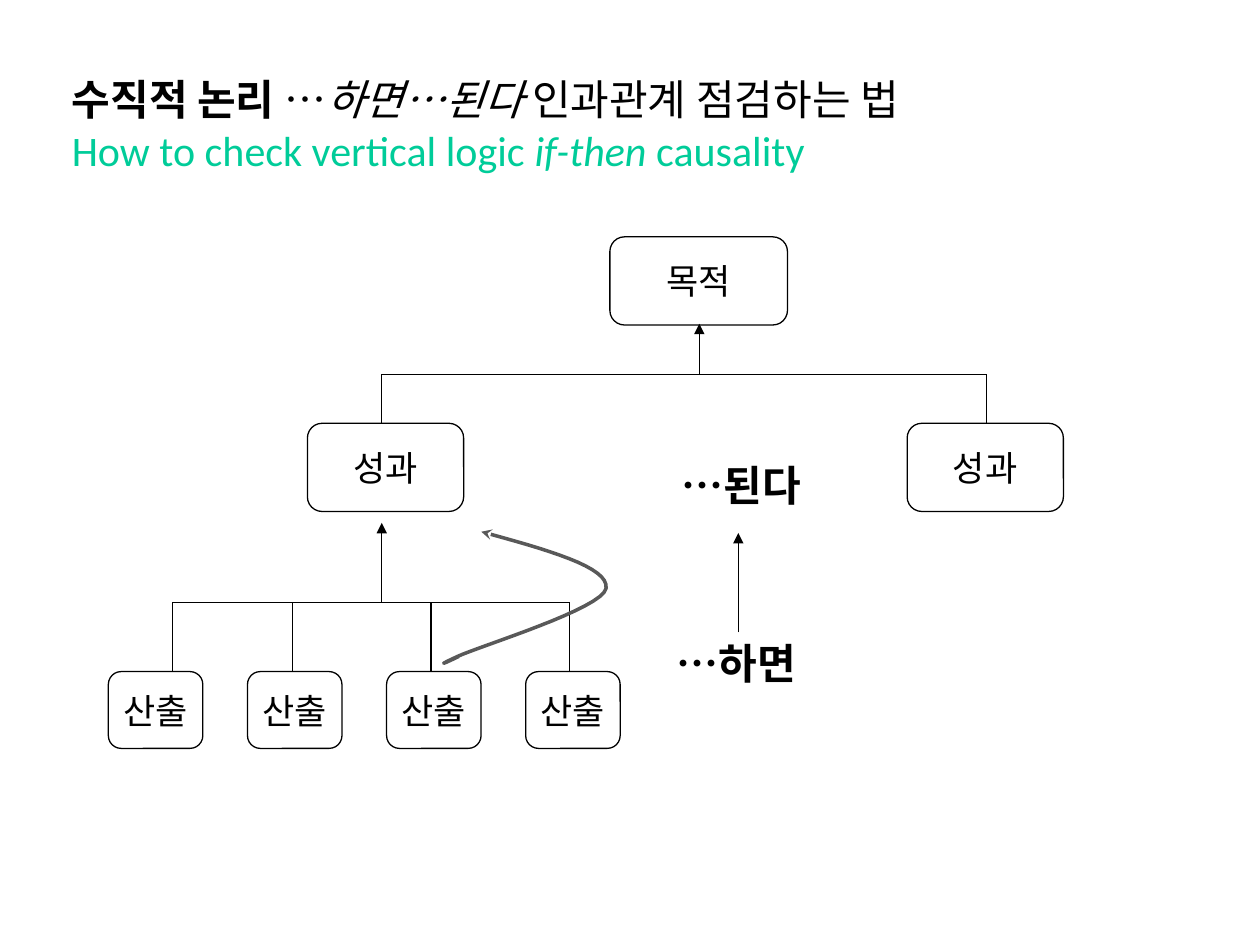
import dataclasses

import lxml.etree
import pptx
import pptx.dml.color
import pptx.enum.shapes
import pptx.enum.text
import pptx.oxml.ns
import pptx.util

PX = 9144


@dataclasses.dataclass(frozen=True)
class Theme:
    ink: str = "000000"
    accent: str = "00CC99"
    curve: str = "595959"
    body_font: str = "Calibri"
    title_font: str = "Arial"
    large: int = 24
    node: int = 20
    thin: float = 0.75
    thick: float = 2


def emu(*lengths):
    return [pptx.util.Emu(round(length * PX)) for length in lengths]


def rgb(color):
    return pptx.dml.color.RGBColor.from_string(color)


def write(paragraph, text, *, font, size, color, bold=False, italic=False):
    run = paragraph.add_run()
    run.text = text
    run.font.name = font
    run.font.size = pptx.util.Pt(size)
    run.font.color.rgb = rgb(color)
    run.font.bold = bold
    run.font.italic = italic


def bezier(start, control_1, control_2, end, steps=16):
    for step in range(1, steps + 1):
        t = step / steps
        yield tuple(
            (1 - t) ** 3 * a + 3 * (1 - t) ** 2 * t * b + 3 * (1 - t) * t ** 2 * c + t ** 3 * d
            for a, b, c, d in zip(start, control_1, control_2, end)
        )


class LogicSlide:
    def __init__(self, deck, theme):
        self.theme = theme
        self.slide = deck.slides.add_slide(deck.slide_layouts[5])
        self.shapes = self.slide.shapes

    def title(self, x, y, width, height, lines):
        heading = self.shapes.title
        heading.left, heading.top, heading.width, heading.height = emu(x, y, width, height)
        frame = heading.text_frame
        frame.auto_size = pptx.enum.text.MSO_AUTO_SIZE.NONE
        frame.vertical_anchor = pptx.enum.text.MSO_ANCHOR.MIDDLE
        paragraph = frame.paragraphs[0]
        paragraph.alignment = pptx.enum.text.PP_ALIGN.LEFT
        for index, (look, pieces) in enumerate(lines):
            if index:
                paragraph.add_line_break()
            for text, emphasis in pieces:
                write(paragraph, text, size=self.theme.large, **look, **emphasis)

    def box(self, x, y, width, height, text):
        node = self.shapes.add_shape(
            pptx.enum.shapes.MSO_SHAPE.ROUNDED_RECTANGLE, *emu(x, y, width, height))
        node.shadow.inherit = False
        node.fill.background()
        self.stroke(node, self.theme.ink, self.theme.thin)
        frame = node.text_frame
        frame.word_wrap = False
        frame.vertical_anchor = pptx.enum.text.MSO_ANCHOR.MIDDLE
        paragraph = frame.paragraphs[0]
        paragraph.alignment = pptx.enum.text.PP_ALIGN.CENTER
        write(paragraph, text, font=self.theme.body_font, size=self.theme.node,
              color=self.theme.ink)

    def label(self, x, y, width, height, text):
        frame = self.shapes.add_textbox(*emu(x, y, width, height)).text_frame
        frame.word_wrap = True
        write(frame.paragraphs[0], text, font=self.theme.body_font, size=self.theme.large,
              color=self.theme.ink, bold=True)

    def stroke(self, shape, color, width, **arrowheads):
        shape.line.color.rgb = rgb(color)
        shape.line.width = pptx.util.Pt(width)
        outline = shape.element.spPr.find(pptx.oxml.ns.qn("a:ln"))
        for end, kind in arrowheads.items():
            lxml.etree.SubElement(outline, pptx.oxml.ns.qn(f"a:{end}"), type=kind)

    def line(self, x1, y1, x2, y2, **arrowheads):
        link = self.shapes.add_connector(
            pptx.enum.shapes.MSO_CONNECTOR.STRAIGHT, *emu(x1, y1, x2, y2))
        self.stroke(link, self.theme.ink, self.theme.thin, **arrowheads)
        lxml.etree.SubElement(link.element.spPr, pptx.oxml.ns.qn("a:effectLst"))

    def arrow(self, x, bottom, top):
        self.line(x, bottom, x, top, tailEnd="triangle")

    def branch(self, stems, bottom, rail, trunk, top):
        self.line(stems[-1], rail, stems[0], rail)
        for stem in stems:
            self.line(stem, bottom, stem, rail)
        self.arrow(trunk, rail, top)

    def curve(self, start, segments):
        points = [start]
        for segment in segments:
            points.extend(bezier(points[-1], *segment))
        builder = self.shapes.build_freeform(*emu(*start))
        builder.add_line_segments([emu(*point) for point in points[1:]], close=False)
        swoop = builder.convert_to_shape()
        swoop.shadow.inherit = False
        swoop.fill.background()
        self.stroke(swoop, self.theme.curve, self.theme.thick, headEnd="stealth")


def main():
    theme = Theme()
    deck = pptx.Presentation()
    deck.slide_width, deck.slide_height = emu(1000, 750)
    page = LogicSlide(deck, theme)

    korean = {"font": theme.title_font, "color": theme.ink}
    english = {"font": theme.body_font, "color": theme.accent}
    page.title(47, 36, 850, 125, [
        (korean, [("수직적 논리 ", {"bold": True}), ("…", {}),
                  ("하면…된다 ", {"italic": True}), ("인과관계 점검하는 법", {})]),
        (english, [("How to check vertical logic ", {}), ("if-then", {"italic": True}),
                   (" causality", {})]),
    ])

    page.box(484, 188, 141, 70, "목적")
    for outcome_x in (244, 720):
        page.box(outcome_x, 336, 124, 70, "성과")
    for index in range(4):
        page.box(86 + 110.4 * index, 533, 75, 61, "산출")

    page.branch([137, 232, 342, 452], bottom=533, rail=478, trunk=303, top=415)
    page.branch([303, 783], bottom=336, rail=297, trunk=555, top=257)

    page.arrow(586, 502, 423)
    page.label(527, 501, 129, 51, "…하면")
    page.label(531, 360, 150, 51, "…된다")

    page.curve((382, 422), [
        ((433, 436), (484, 450), (481, 467)),
        ((478, 483), (383, 512), (363, 521)),
        ((344, 530), (354, 526), (364, 521)),
    ])

    deck.save("out.pptx")


if __name__ == "__main__":
    main()
